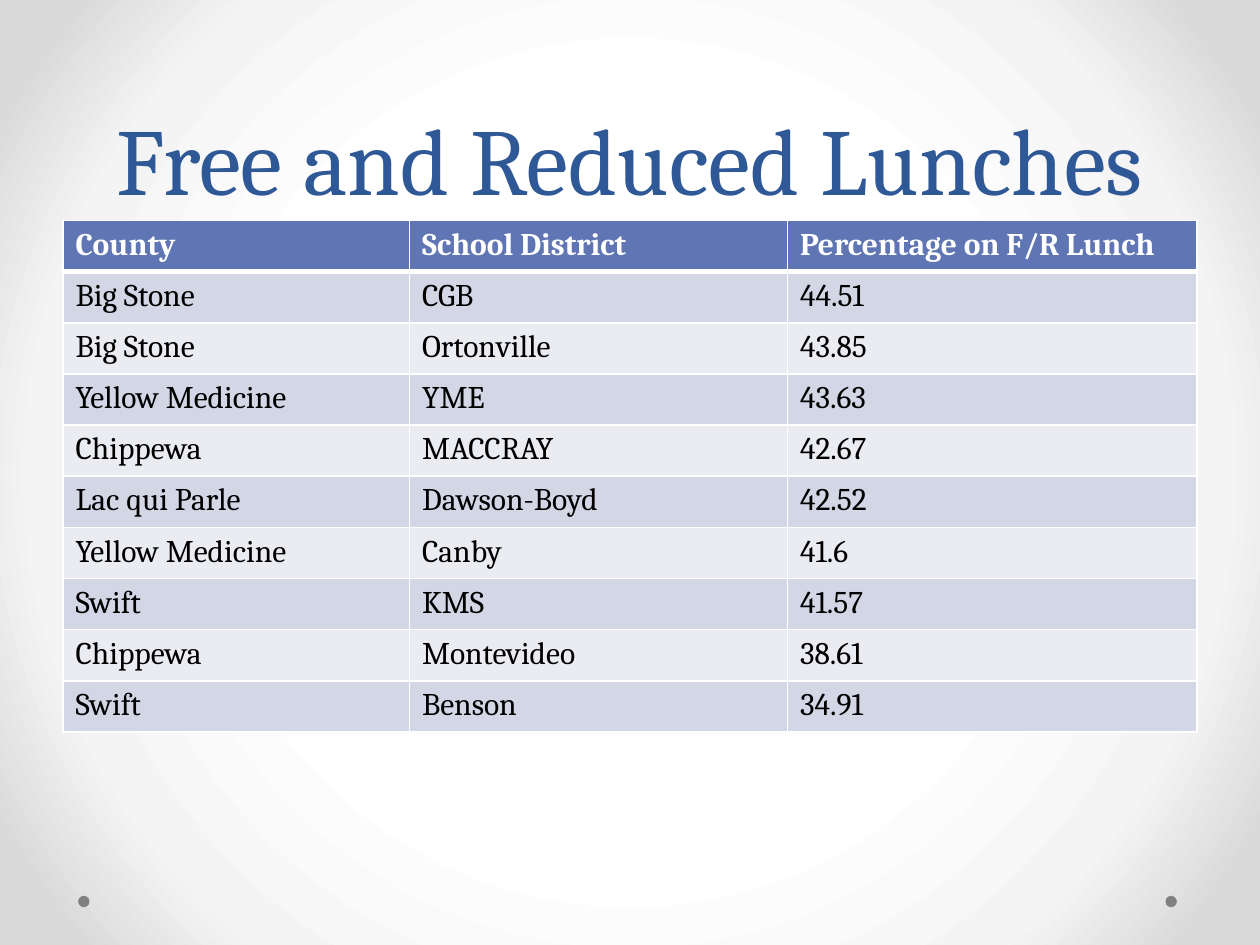
from pptx import Presentation
from pptx.dml.color import RGBColor
from pptx.enum.shapes import MSO_SHAPE
from pptx.enum.text import MSO_ANCHOR, PP_ALIGN
from pptx.oxml import parse_xml
from pptx.oxml.ns import nsdecls
from pptx.util import Inches, Pt

OVAL, CENTER, BOTTOM = MSO_SHAPE.OVAL, PP_ALIGN.CENTER, MSO_ANCHOR.BOTTOM

# Content
TITLE = "Free and Reduced Lunches"
ROWS = [
    ("County", "School District", "Percentage on F/R Lunch"),
    ("Big Stone", "CGB", "44.51"),
    ("Big Stone", "Ortonville", "43.85"),
    ("Yellow Medicine", "YME", "43.63"),
    ("Chippewa", "MACCRAY", "42.67"),
    ("Lac qui Parle", "Dawson-Boyd", "42.52"),
    ("Yellow Medicine", "Canby", "41.6"),
    ("Swift", "KMS", "41.57"),
    ("Chippewa", "Montevideo", "38.61"),
    ("Swift", "Benson", "34.91"),
]
COL_WIDTHS = [2.75, 3, 3.25]
TABLE_HEIGHT = 4.06
DOT_LEFTS, DOT_TOP, DOT_SIZE = [9.25, 0.62], 7.11, 0.09
BACKGROUND_STOPS = [(50, "FFFFFF"), (76, "F4F4F4"), (92, "DADADA")]
COLORS = {"title": "2F5897", "header": "6076B4", "odd": "D2D6E5",
          "even": "EAECF2", "white": "FFFFFF", "black": "000000", "dot": "808080"}


def rgb(name):
    return RGBColor.from_string(COLORS[name])


def set_font(run, color, **values):
    run.font.name = "Cambria"
    run.font.color.rgb = rgb(color)
    for key, value in values.items():
        setattr(run.font, key, value)


def set_background(slide):
    stops = "".join(f'<a:gs pos="{pos * 1000}"><a:srgbClr val="{color}"/></a:gs>'
                    for pos, color in BACKGROUND_STOPS)
    bg = parse_xml(
        f'<p:bg {nsdecls("p", "a")}><p:bgPr><a:gradFill rotWithShape="1">'
        f'<a:gsLst>{stops}</a:gsLst><a:path path="circle">'
        '<a:fillToRect l="50000" t="50000" r="50000" b="50000"/></a:path>'
        '</a:gradFill><a:effectLst/></p:bgPr></p:bg>')
    slide.element.cSld.insert(0, bg)


def set_borders(cell, top, bottom):
    tc_pr = cell._tc.get_or_add_tcPr()
    for side, width in {"L": 1, "R": 1, "T": top, "B": bottom}.items():
        tc_pr.append(parse_xml(
            f'<a:ln{side} {nsdecls("a")} w="{Pt(width)}"><a:solidFill>'
            f'<a:srgbClr val="{COLORS["white"]}"/></a:solidFill></a:ln{side}>'))


prs = Presentation()
prs.slide_width, prs.slide_height = Inches(10), Inches(7.5)
s = prs.slides.add_slide(prs.slide_layouts[5])
set_background(s)

# Footer dots
for left in DOT_LEFTS:
    dot = s.shapes.add_shape(OVAL, Inches(left), Inches(DOT_TOP),
                             Inches(DOT_SIZE), Inches(DOT_SIZE))
    dot.shadow.inherit = False
    dot.fill.solid()
    dot.fill.fore_color.rgb = rgb("dot")
    dot.line.fill.background()

# Title
title = s.shapes.title
title.left, title.top = Inches(0.5), Inches(0)
title.width, title.height = Inches(9), Inches(1.75)
tf = title.text_frame
tf.vertical_anchor = BOTTOM
p = tf.paragraphs[0]
p.alignment, p.line_spacing = CENTER, Pt(58)
r = p.add_run()
r.text = TITLE
set_font(r, "title", size=Pt(54))

# Lunch table
table = s.shapes.add_table(len(ROWS), len(COL_WIDTHS), Inches(0.5), Inches(1.75),
                           Inches(sum(COL_WIDTHS)), Inches(TABLE_HEIGHT)).table
for column, width in zip(table.columns, COL_WIDTHS):
    column.width = Inches(width)
for i, values in enumerate(ROWS):
    header = i == 0
    fill = "header" if header else "odd" if i % 2 else "even"
    for j, value in enumerate(values):
        cell = table.cell(i, j)
        set_borders(cell, top=3 if i == 1 else 1, bottom=3 if header else 1)
        cell.fill.solid()
        cell.fill.fore_color.rgb = rgb(fill)
        r = cell.text_frame.paragraphs[0].add_run()
        r.text = value
        set_font(r, "white" if header else "black", size=Pt(18), bold=header)

prs.save("out.pptx")
